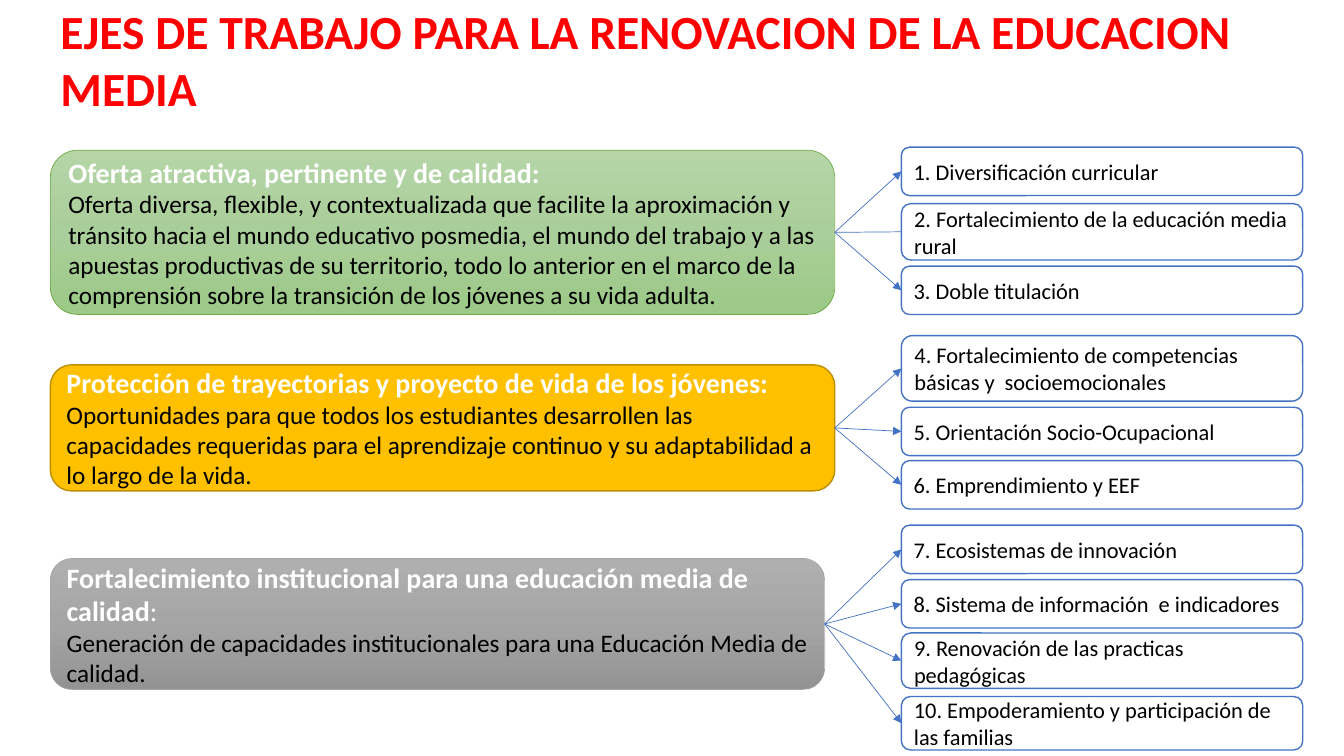
from copy import deepcopy

from lxml.etree import SubElement
from pptx import Presentation
from pptx.dml.color import RGBColor
from pptx.enum.shapes import MSO_CONNECTOR, MSO_SHAPE
from pptx.enum.text import MSO_ANCHOR, PP_ALIGN
from pptx.oxml.ns import qn
from pptx.util import Inches, Pt

# Grid: one hundred columns and one hundred rows
WIDTH, HEIGHT = Inches(13.33), Inches(7.5)
COLUMN, ROW = WIDTH / 100, HEIGHT / 100
LEFT_EDGE, ITEM_LEFT, ITEM_WIDTH = 3.75, 67.07, 29.86
ITEM_HEIGHT = 6.4
LEFT_SITE, RIGHT_SITE = 1, 3
BLUE, BLACK, WHITE, RED = "4472C4", "000000", "FFFFFF", "FF0000"

HEADING = {"size": Pt(20), "bold": True, "color": WHITE}
COLON = {"size": Pt(20), "bold": False, "color": WHITE}
BODY = {"size": Pt(18), "bold": False, "color": BLACK}
ITEM = {"size": Pt(16), "color": BLACK}
TITLE = {"size": Pt(34), "bold": True, "color": RED}

# Each axis: its box, and its items as (text, top row, rows, arrowhead)
AXES = [
    {
        "heading": [("Oferta atractiva, pertinente y de calidad:", HEADING)],
        "body": "Oferta diversa, flexible, y contextualizada que facilite la aproximación y "
                "tránsito hacia el mundo educativo posmedia, el mundo del trabajo y a las "
                "apuestas productivas de su territorio, todo lo anterior en el marco de la "
                "comprensión sobre la transición de los jóvenes a su vida adulta.",
        "place": (LEFT_EDGE, 19.87, 58.36, 21.73),
        "fill": ["B5D5A7", "AACE9A", "9CC987"], "line": ("70AD47", 0.5),
        "items": [
            ("1. Diversificación curricular", 19.47, ITEM_HEIGHT, True),
            ("2. Fortalecimiento de la educación media rural", 26.93, 7.47, False),
            ("3. Doble titulación", 35.2, ITEM_HEIGHT, True),
        ],
    },
    {
        "heading": [("Protección de trayectorias y proyecto de vida de los jóvenes:", HEADING)],
        "body": "Oportunidades para que todos los estudiantes desarrollen las capacidades "
                "requeridas para el aprendizaje continuo y su adaptabilidad a lo largo de la vida.",
        "place": (LEFT_EDGE, 48.27, 58.36, 16.67),
        "fill": ["FFC000"], "line": ("BD8E00", 1),
        "items": [
            ("4. Fortalecimiento de competencias básicas y  socioemocionales", 44.4, 8.67, True),
            ("5. Orientación Socio-Ocupacional", 53.87, ITEM_HEIGHT, True),
            ("6. Emprendimiento y EEF", 60.93, ITEM_HEIGHT, True),
        ],
    },
    {
        "heading": [("Fortalecimiento institucional para una educación media de calidad", HEADING),
                    (":", COLON)],
        "body": "Generación de capacidades institucionales para una Educación Media de calidad.",
        "place": (LEFT_EDGE, 73.87, 57.61, 17.33),
        "fill": ["AFAFAF", "A5A5A5", "939393"], "line": ("A5A5A5", 0.5),
        "items": [
            ("7. Ecosistemas de innovación", 69.47, ITEM_HEIGHT, True),
            ("8. Sistema de información  e indicadores", 76.67, ITEM_HEIGHT, True),
            ("9. Renovación de las practicas pedagógicas", 83.73, 7.33, True),
            ("10. Empoderamiento y participación de las familias", 92.13, 7.07, True),
        ],
    },
]


def color(target, code):
    target.rgb = RGBColor.from_string(code)


def grid(left, top, width, height):
    return round(left * COLUMN), round(top * ROW), round(width * COLUMN), round(height * ROW)


def add_span(para, text, style):
    span = para.add_run()
    span.text = text
    span.font.name = "Calibri"
    for name, value in style.items():
        if name == "color":
            color(span.font.color, value)
        else:
            setattr(span.font, name, value)


def write(frame, paragraphs, anchor):
    frame.word_wrap = True
    frame.vertical_anchor = anchor
    for index, spans in enumerate(paragraphs):
        para = frame.add_paragraph() if index else frame.paragraphs[0]
        para.alignment = PP_ALIGN.LEFT
        for text, style in spans:
            add_span(para, text, style)


def paint(box, codes):
    """One colour fills plainly; three run from top to bottom."""
    if len(codes) == 1:
        box.fill.solid()
        color(box.fill.fore_color, codes[0])
        return
    box.fill.gradient()
    box.fill.gradient_angle = 270
    stop_list = next(box.element.spPr.iter(qn("a:gsLst")))
    stop_list.insert(1, deepcopy(stop_list[0]))
    for index, (stop, code) in enumerate(zip(box.fill.gradient_stops, codes)):
        stop.position = index / (len(codes) - 1)
        color(stop.color, code)


def add_box(page, place, codes, line, paragraphs):
    box = page.shapes.add_shape(MSO_SHAPE.ROUNDED_RECTANGLE, *grid(*place))
    box.shadow.inherit = False
    paint(box, codes)
    color(box.line.color, line[0])
    box.line.width = Pt(line[1])
    write(box.text_frame, paragraphs, MSO_ANCHOR.MIDDLE)
    return box


def add_link(page, axis_box, item_box, arrowhead):
    link = page.shapes.add_connector(MSO_CONNECTOR.STRAIGHT, 0, 0, 0, 0)
    link.begin_connect(axis_box, RIGHT_SITE)
    link.end_connect(item_box, LEFT_SITE)
    color(link.line.color, BLUE)
    link.line.width = Pt(0.5)
    if arrowhead:
        SubElement(link.line._get_or_add_ln(), qn("a:tailEnd"), type="triangle")
    SubElement(link.element.spPr, qn("a:effectLst"))


def add_title(page, text):
    title = page.shapes.title
    places = grid(LEFT_EDGE, -0.4, 94.22, 16.67)
    for name, value in zip(("left", "top", "width", "height"), places):
        setattr(title, name, value)
    write(title.text_frame, [[(text, TITLE)]], MSO_ANCHOR.TOP)


def add_axis(page, axis):
    paragraphs = [axis["heading"], [(axis["body"], BODY)]]
    axis_box = add_box(page, axis["place"], axis["fill"], axis["line"], paragraphs)
    for text, top, rows, arrowhead in axis["items"]:
        place = (ITEM_LEFT, top, ITEM_WIDTH, rows)
        item_box = add_box(page, place, [WHITE], (BLUE, 1), [[(text, ITEM)]])
        add_link(page, axis_box, item_box, arrowhead)


def main():
    deck = Presentation()
    deck.slide_width, deck.slide_height = WIDTH, HEIGHT
    page = deck.slides.add_slide(deck.slide_layouts.get_by_name("Title Only"))
    add_title(page, "EJES DE TRABAJO PARA LA RENOVACION DE LA EDUCACION MEDIA")
    for axis in AXES:
        add_axis(page, axis)
    deck.save("out.pptx")


if __name__ == "__main__":
    main()
